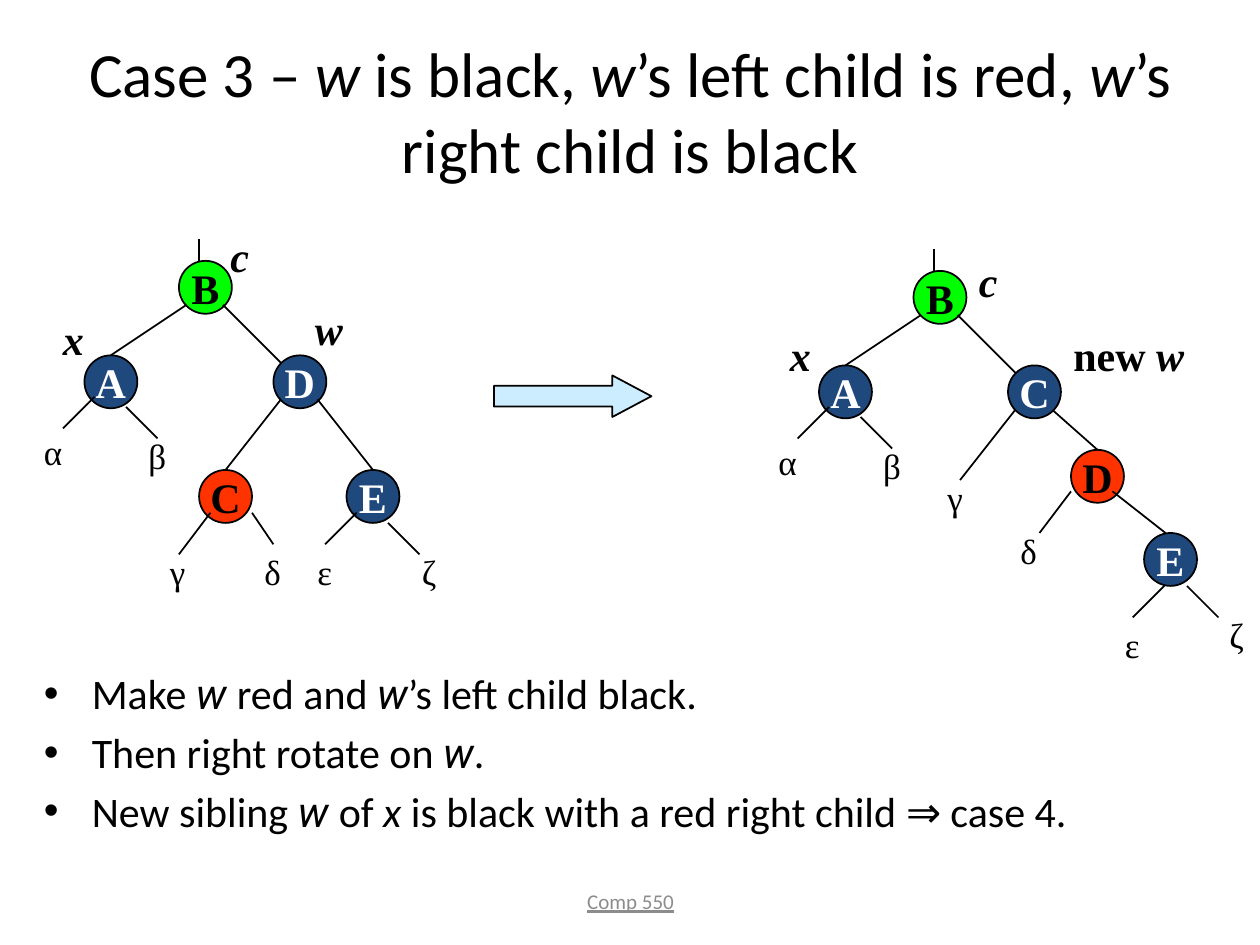
from lxml import etree
from pptx import Presentation
from pptx.dml.color import RGBColor
from pptx.enum.shapes import MSO_CONNECTOR as Connector, MSO_SHAPE as Shape
from pptx.enum.text import MSO_ANCHOR as Anchor, MSO_AUTO_SIZE as AutoSize, PP_ALIGN as Align
from pptx.oxml.ns import qn
from pptx.util import Inches, Pt

BLACK = RGBColor(0x00, 0x00, 0x00)
WHITE = RGBColor(0xFF, 0xFF, 0xFF)
GRAY = RGBColor(0x8C, 0x8C, 0x8C)
GREEN = RGBColor(0x00, 0xFF, 0x00)
RED = RGBColor(0xFF, 0x33, 0x00)
NAVY = RGBColor(0x1F, 0x49, 0x7D)
PALE_BLUE = RGBColor(0xCC, 0xEC, 0xFF)
SANS, SERIF = "Calibri", "Times New Roman"

NODE_SIZE = 0.42
LABEL_WIDTHS = {"α": 0.38, "β": 0.35, "γ": 0.32, "δ": 0.34, "ε": 0.32, "ζ": 0.34,
                "*c*": 0.35, "*x*": 0.37, "*w*": 0.42, "new* w*": 1.08}

# Tree parts, in inches from the top left of the tree's box.
SHARED_NODES = [("B", GREEN, 1.17, 0.17), ("A", NAVY, 0.42, 0.92)]
SHARED_EDGES = [(1.33, 0, 1.33, 0.17), (1.23, 0.52, 0.63, 0.92), (1.52, 0.52, 1.98, 0.98),
                (1.98, 1.27, 1.54, 1.83), (0.5, 1.25, 0.25, 1.5), (0.75, 1.33, 1, 1.58)]
SHARED_SUBTREES = [("α", 0, 1.47), ("β", 0.83, 1.5)]

BEFORE = {
    "nodes": [("D", NAVY, 1.92, 0.92), ("C", RED, 1.33, 1.83), ("E", NAVY, 2.5, 1.83)],
    "edges": [(2.27, 1.27, 2.71, 1.83), (1.42, 2.17, 1.17, 2.5), (1.75, 2.17, 1.92, 2.42),
              (2.58, 2.17, 2.33, 2.42), (2.83, 2.25, 3.08, 2.5)],
    "subtrees": [("γ", 1, 2.42), ("δ", 1.75, 2.42), ("ε", 2.17, 2.42), ("ζ", 3, 2.42)],
    "names": [("*c*", 1.48, -0.12), ("*x*", 0.15, 0.54), ("*w*", 2.15, 0.46)],
}
AFTER = {
    "nodes": [("C", NAVY, 1.92, 0.92), ("D", RED, 2.42, 1.59), ("E", NAVY, 3, 2.25)],
    "edges": [(2.28, 1.28, 2.63, 1.59), (2.42, 1.92, 2.17, 2.25), (2.75, 1.92, 3.17, 2.25),
              (3.16, 2.67, 2.91, 2.92), (3.34, 2.67, 3.59, 2.92)],
    "subtrees": [("γ", 1.34, 1.75), ("δ", 1.92, 2.17), ("ε", 2.75, 2.92), ("ζ", 3.58, 2.84)],
    "names": [("*c*", 1.59, 0), ("*x*", 0.09, 0.59), ("new* w*", 2.34, 0.59)],
}


def write(para, text, size, font=SANS, color=BLACK, bold=False, underline=False,
          align=Align.LEFT, italic_fonts=None):
    """Fill a paragraph; text between asterisks is italic, in its own font if one is given."""
    para.alignment = align
    for index, part in enumerate(text.split("*")):
        if not part:
            continue
        span = para.add_run()
        span.text = part
        italic = index % 2 == 1
        span.font.name = (italic_fonts or {}).get(part.strip(), font) if italic else font
        span.font.size = Pt(size)
        span.font.color.rgb = color
        span.font.bold = bold
        span.font.italic = italic
        span.font.underline = underline


def add_text_box(page, left, top, width, height):
    box = page.shapes.add_textbox(Inches(left), Inches(top), Inches(width), Inches(height))
    box.text_frame.word_wrap = True
    return box.text_frame


def add_outlined_shape(page, kind, left, top, width, height, fill):
    shape = page.shapes.add_shape(kind, Inches(left), Inches(top), Inches(width), Inches(height))
    shape.shadow.inherit = False
    shape.fill.solid()
    shape.fill.fore_color.rgb = fill
    shape.line.color.rgb = BLACK
    shape.line.width = Pt(1)
    return shape


def add_node(page, letter, fill, left, top):
    node = add_outlined_shape(page, Shape.OVAL, left, top, NODE_SIZE, NODE_SIZE, fill)
    frame = node.text_frame
    frame.word_wrap = False
    frame.vertical_anchor = Anchor.MIDDLE
    write(frame.paragraphs[0], letter, 24, SERIF, WHITE if fill == NAVY else BLACK,
          bold=True, align=Align.CENTER)


def add_edge(page, x1, y1, x2, y2):
    edge = page.shapes.add_connector(Connector.STRAIGHT, Inches(x1), Inches(y1),
                                     Inches(x2), Inches(y2))
    edge.line.color.rgb = BLACK
    edge.line.width = Pt(1)
    etree.SubElement(edge._element.spPr, qn("a:effectLst"))


def add_label(page, text, left, top, height, size, bold):
    frame = add_text_box(page, left, top, LABEL_WIDTHS[text], height)
    frame.word_wrap = False
    frame.auto_size = AutoSize.SHAPE_TO_FIT_TEXT
    write(frame.paragraphs[0], text, size, SERIF, bold=bold)


def add_tree(page, left, top, tree):
    for letter, fill, x, y in SHARED_NODES + tree["nodes"]:
        add_node(page, letter, fill, left + x, top + y)
    for x1, y1, x2, y2 in SHARED_EDGES + tree["edges"]:
        add_edge(page, left + x1, top + y1, left + x2, top + y2)
    for text, x, y in SHARED_SUBTREES + tree["subtrees"]:
        add_label(page, text, left + x, top + y, 0.43, 20, bold=False)
    for text, x, y in tree["names"]:
        add_label(page, text, left + x, top + y, 0.5, 24, bold=True)


def add_title(page, left, top, width, height, text):
    title = page.shapes.title
    title.left, title.top = Inches(left), Inches(top)
    title.width, title.height = Inches(width), Inches(height)
    title.text_frame.vertical_anchor = Anchor.MIDDLE
    write(title.text_frame.paragraphs[0], text, 36, align=Align.CENTER)


def add_bullets(page, left, top, width, height, lines):
    frame = add_text_box(page, left, top, width, height)
    for index, line in enumerate(lines):
        para = frame.add_paragraph() if index else frame.paragraphs[0]
        write(para, line, 24, italic_fonts={"w": "Roboto"})
        para.space_before = Pt(4.8)
        properties = para._p.get_or_add_pPr()
        properties.set("marL", str(Inches(0.38)))
        properties.set("indent", str(-Inches(0.38)))
        etree.SubElement(properties, qn("a:buFont"), typeface="Arial")
        etree.SubElement(properties, qn("a:buChar"), char="•")


def add_footer(page, left, top, width, height, text):
    frame = add_text_box(page, left, top, width, height)
    frame.vertical_anchor = Anchor.MIDDLE
    write(frame.paragraphs[0], text, 12, color=GRAY, underline=True, align=Align.CENTER)


def main():
    deck = Presentation()
    deck.slide_width, deck.slide_height = Inches(10), Inches(7.5)
    page = deck.slides.add_slide(deck.slide_layouts.get_by_name("Title Only"))
    add_title(page, 0.5, 0.25, 9, 1.25,
              "Case 3 – *w* is black, *w*’s left child is red, *w*’s right child is black")
    add_bullets(page, 0.25, 5.25, 9.25, 2.42, [
        "Make *w *red and *w*’s left child black.",
        "Then right rotate on *w*.",
        "New sibling *w *of *x *is black with a red right child ⇒ case 4.",
    ])
    add_footer(page, 3.42, 6.95, 3.17, 0.4, "Comp 550")
    add_tree(page, 0.25, 1.9, BEFORE)
    arrow = add_outlined_shape(page, Shape.RIGHT_ARROW, 3.92, 2.98, 1.25, 0.33, PALE_BLUE)
    arrow.adjustments[1] = 0.94
    add_tree(page, 6.08, 1.98, AFTER)
    deck.save("out.pptx")


if __name__ == "__main__":
    main()
